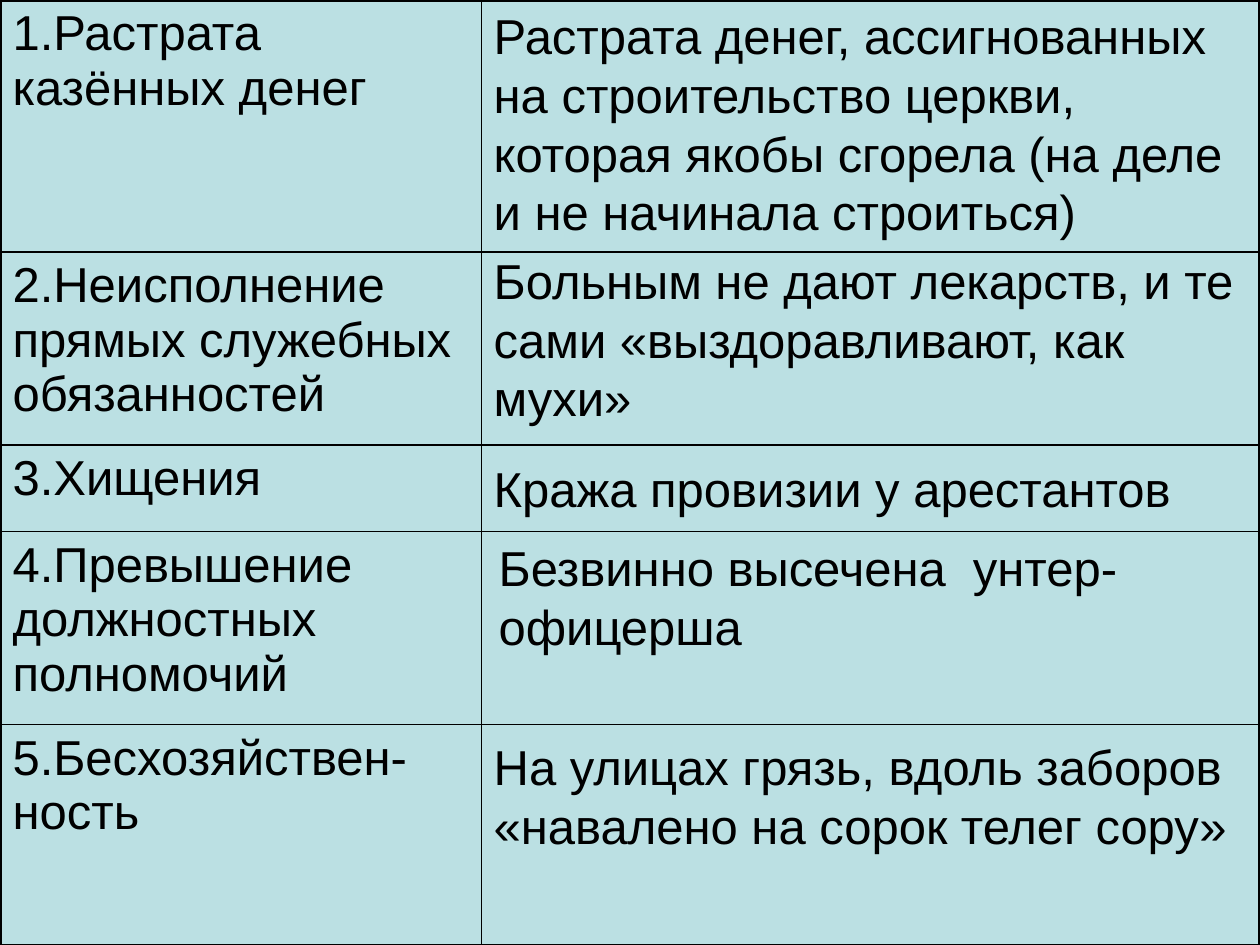
import pptx
import pptx.util
import pptx.dml.color
import pptx.enum.text
from pptx.oxml.ns import qn
from lxml import etree

Inches, Pt = pptx.util.Inches, pptx.util.Pt
HEX = {"back": "BBE0E3", "ink": "000000"}
COLS = [3.82, 6.18]
ROWS = [2, 1.53, 0.69, 1.53, 1.76]
SINS = [
    "1.Растрата казённых денег",
    "2.Неисполнение прямых служебных обязанностей",
    "3.Хищения",
    "4.Превышение должностных полномочий",
    "5.Бесхозяйствен-ность",
]
FACTS = [
    ((3.82, 0, 6.18, 2.67), "Растрата денег, ассигнованных на строительство церкви, "
     "которая якобы сгорела (на деле и не начинала строиться)"),
    ((3.82, 1.94, 6.18, 2.2), "Больным не дают лекарств, и те сами «выздоравливают, как мухи»"),
    ((3.82, 3.59, 5.98, 0.57), "Кража провизии у арестантов"),
    ((3.86, 4.22, 6.1, 1.74), "Безвинно высечена  унтер-офицерша"),
    ((3.82, 5.8, 6.18, 1.03), "На улицах грязь, вдоль заборов «навалено на сорок телег сору»"),
]


def color(name):
    """Return a named colour."""
    return pptx.dml.color.RGBColor.from_string(HEX[name])


def write(frame, text):
    """Put one run of text in a frame and return its paragraph."""
    para = frame.paragraphs[0]
    run = para.add_run()
    run.text = text
    run.font.name = "Arial"
    run.font.size = Pt(28)
    run.font.bold = False
    run.font.color.rgb = color("ink")
    return para


def border(cell, sides):
    """Draw the four sides of a cell, given as tag and width pairs."""
    props = cell._tc.get_or_add_tcPr()
    for spot, (tag, width) in enumerate(sides):
        line = etree.Element(qn("a:" + tag), w=str(Pt(width)))
        fill = etree.SubElement(line, qn("a:solidFill"))
        etree.SubElement(fill, qn("a:srgbClr"), val=HEX["ink"])
        props.insert(spot, line)


def add_grid(slide):
    """Add the table with thick outer and thin inner lines."""
    shape = slide.shapes.add_table(len(ROWS), len(COLS), 0, 0, Inches(10), Inches(7.5))
    table = shape.table
    table.first_row = table.horz_banding = False
    for col, width in zip(table.columns, COLS):
        col.width = Inches(width)
    for row, height in zip(table.rows, ROWS):
        row.height = Inches(height)
    for r, sin in enumerate(SINS):
        write(table.cell(r, 0).text_frame, sin)
        for c in range(len(COLS)):
            cell = table.cell(r, c)
            cell.fill.background()
            edges = {"lnL": c == 0, "lnR": c == len(COLS) - 1,
                     "lnT": r == 0, "lnB": r == len(ROWS) - 1}
            border(cell, [(tag, 2.25 if outer else 1) for tag, outer in edges.items()])


def add_fact(slide, place, text):
    """Add a text box over the right column."""
    frame = slide.shapes.add_textbox(*map(Inches, place)).text_frame
    frame.word_wrap = True
    frame.auto_size = pptx.enum.text.MSO_AUTO_SIZE.SHAPE_TO_FIT_TEXT
    write(frame, text).line_spacing = Pt(33.5)


def main():
    """Build and save the slide."""
    deck = pptx.Presentation()
    deck.slide_width, deck.slide_height = Inches(10), Inches(7.5)
    slide = deck.slides.add_slide(deck.slide_layouts[6])
    slide.background.fill.solid()
    slide.background.fill.fore_color.rgb = color("back")
    add_grid(slide)
    for place, text in FACTS:
        add_fact(slide, place, text)
    deck.save("out.pptx")


if __name__ == "__main__":
    main()
